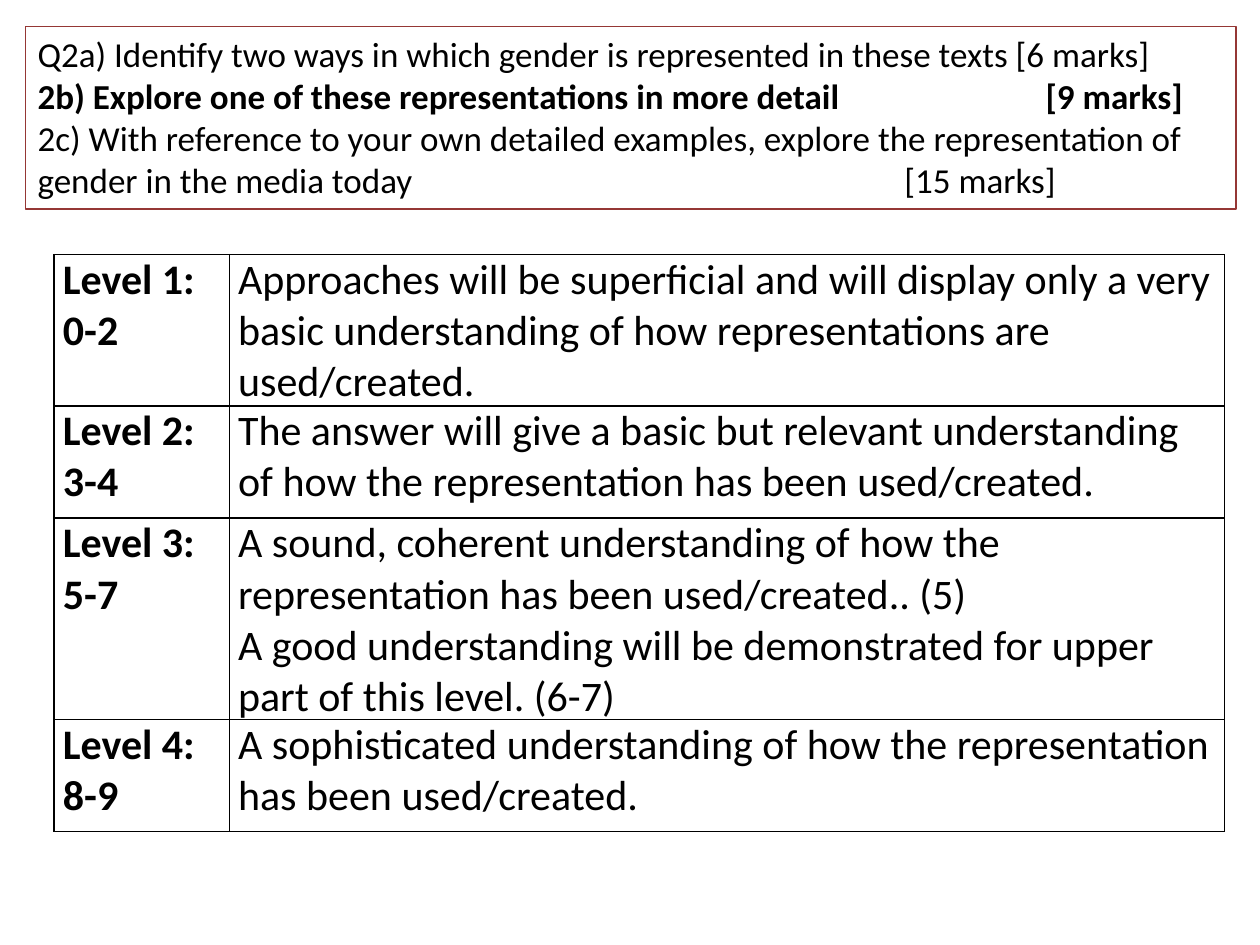
from dataclasses import dataclass

from lxml.etree import SubElement
from pptx import Presentation
from pptx.dml.color import RGBColor
from pptx.enum.shapes import MSO_SHAPE
from pptx.enum.text import MSO_ANCHOR, MSO_AUTO_SIZE, PP_ALIGN
from pptx.oxml.ns import qn
from pptx.util import Inches, Pt


@dataclass(frozen=True)
class Theme:
    font: str = "Calibri"
    text: RGBColor = RGBColor(0, 0, 0)
    frame: RGBColor = RGBColor(0x95, 0x37, 0x35)
    border: str = "000000"
    question_size: int = 20
    level_size: int = 24


THEME = Theme()

# Text, bold, tab stop of the marks in inches
QUESTIONS = [
    ("Q2a) Identify two ways in which gender is represented in these texts [6 marks]", False, None),
    ("2b) Explore one of these representations in more detail \t[9 marks]", True, 8),
    ("2c) With reference to your own detailed examples, explore the representation of "
     "gender in the media today\t[15 marks]", False, 6.88),
]

# Level, descriptor paragraphs, row height in inches
LEVELS = [
    ("Level 1: 0-2", ["Approaches will be superficial and will display only a very basic "
                      "understanding of how representations are used/created."], 0.89),
    ("Level 2: 3-4", ["The answer will give a basic but relevant understanding of how the "
                      "representation has been used/created."], 0.89),
    ("Level 3: 5-7", ["A sound, coherent understanding of how the representation has been "
                      "used/created.. (5)",
                      "A good understanding will be demonstrated for upper part of this "
                      "level. (6-7)"], 1.34),
    ("Level 4: 8-9", ["A sophisticated understanding of how the representation has been "
                      "used/created."], 0.89),
]
COLUMN_WIDTHS = (1.39, 7.9)


def set_attrs(obj, values):
    for name, value in values.items():
        setattr(obj, name, value)


def add_paragraph(tf, index, text, size, bold):
    p = tf.paragraphs[0] if index == 0 else tf.add_paragraph()
    p.alignment = PP_ALIGN.LEFT
    r = p.add_run()
    r.text = text
    set_attrs(r.font, {"name": THEME.font, "size": Pt(size), "bold": bold})
    r.font.color.rgb = THEME.text
    return p


def add_tab_stop(p, position):
    tabs = SubElement(p._p.get_or_add_pPr(), qn("a:tabLst"))
    SubElement(tabs, qn("a:tab"), pos=str(Inches(position)), algn="l")


def add_borders(cell):
    tc_pr = cell._tc.get_or_add_tcPr()
    for index, side in enumerate(("lnL", "lnR", "lnT", "lnB")):
        ln = tc_pr.makeelement(qn(f"a:{side}"), {"w": str(Pt(1))})
        fill = SubElement(ln, qn("a:solidFill"))
        SubElement(fill, qn("a:srgbClr"), val=THEME.border)
        tc_pr.insert(index, ln)


def add_questions(s, left, top, width, height):
    sp = s.shapes.add_shape(MSO_SHAPE.RECTANGLE, left, top, width, height)
    sp.shadow.inherit = False
    sp.fill.background()
    sp.line.color.rgb = THEME.frame
    sp.line.width = Pt(0.75)
    tf = sp.text_frame
    set_attrs(tf, {"word_wrap": True, "auto_size": MSO_AUTO_SIZE.SHAPE_TO_FIT_TEXT,
                   "vertical_anchor": MSO_ANCHOR.TOP})
    for i, (text, bold, tab) in enumerate(QUESTIONS):
        p = add_paragraph(tf, i, text, THEME.question_size, bold)
        if tab:
            add_tab_stop(p, tab)


def fill_cell(cell, paragraphs, bold):
    cell.fill.background()
    set_attrs(cell, {"margin_left": Inches(0.07), "margin_right": Inches(0.07),
                     "margin_top": 0, "margin_bottom": 0})
    for i, text in enumerate(paragraphs):
        add_paragraph(cell.text_frame, i, text, THEME.level_size, bold)
    add_borders(cell)


def add_levels(s, left, top, width, height):
    table = s.shapes.add_table(len(LEVELS), len(COLUMN_WIDTHS), left, top, width, height).table
    set_attrs(table, {"first_row": False, "horz_banding": False})
    for column, column_width in zip(table.columns, COLUMN_WIDTHS):
        column.width = Inches(column_width)
    for row, (level, descriptors, row_height) in zip(table.rows, LEVELS):
        row.height = Inches(row_height)
        fill_cell(row.cells[0], [level], True)
        fill_cell(row.cells[1], descriptors, False)


def main():
    prs = Presentation()
    set_attrs(prs, {"slide_width": Inches(10), "slide_height": Inches(7.5)})
    s = prs.slides.add_slide(prs.slide_layouts[6])

    # Exam questions
    add_questions(s, Inches(0.2), Inches(0.21), Inches(9.61), Inches(1.45))
    # Mark scheme
    add_levels(s, Inches(0.43), Inches(2.02), Inches(9.29), Inches(4.58))

    prs.save("out.pptx")


if __name__ == "__main__":
    main()
